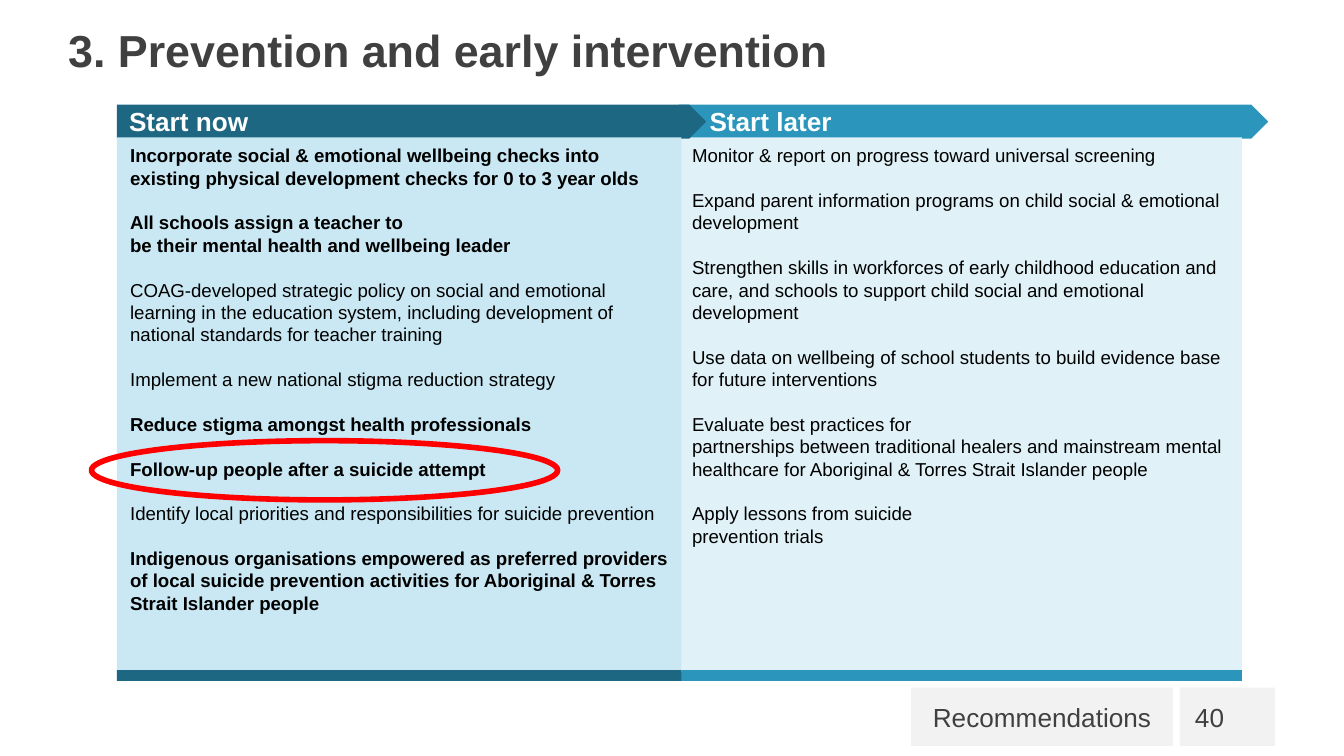
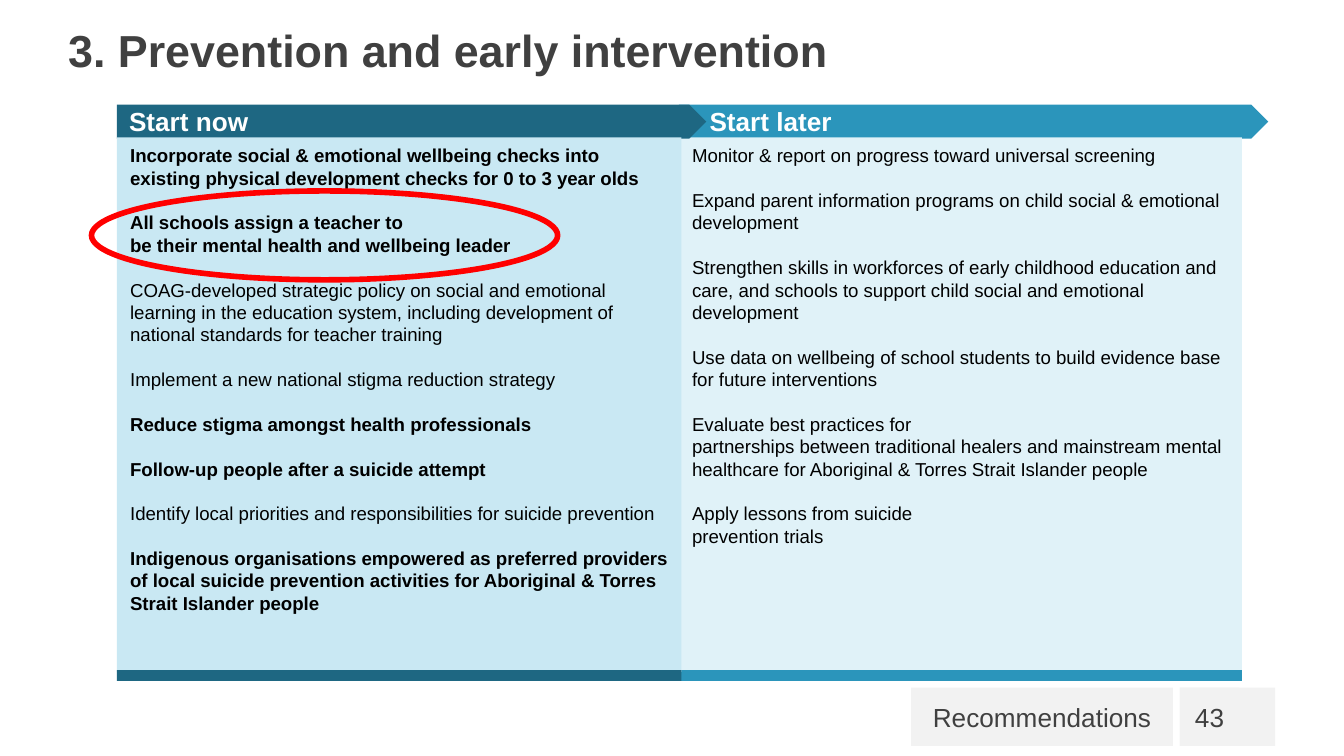
from dataclasses import dataclass
from typing import Any, NamedTuple

import pptx
import pptx.dml.color
import pptx.enum.shapes
import pptx.enum.text
import pptx.shapes.autoshape
import pptx.slide
import pptx.util

Cm = pptx.util.Cm
Pt = pptx.util.Pt
Color = pptx.dml.color.RGBColor
Preset = pptx.enum.shapes.MSO_SHAPE
Align = pptx.enum.text.PP_ALIGN
Anchor = pptx.enum.text.MSO_ANCHOR
Shape = pptx.shapes.autoshape.Shape


@dataclass(frozen=True)
class Theme:
    font: str = "Arial"
    title_size: int = 24
    label_size: int = 14
    body_size: int = 10
    body_pitch: int = 12
    gray_text: Color = Color.from_string("404040")
    body_text: Color = Color.from_string("000000")
    white: Color = Color.from_string("FFFFFF")
    tile: Color = Color.from_string("F2F2F2")
    now: Color = Color.from_string("1E6782")
    now_panel: Color = Color.from_string("C9E8F3")
    later: Color = Color.from_string("2B95BB")
    later_panel: Color = Color.from_string("E0F2F8")
    marker: Color = Color.from_string("FF0000")
    marker_width: int = 3


THEME = Theme()


class Area(NamedTuple):
    left: float
    top: float
    width: float
    height: float


class Line(NamedTuple):
    text: str
    bold: bool = False


class Column(NamedTuple):
    heading: str
    left: float
    heading_left: float
    width: float
    accent: Color
    panel: Color
    actions: tuple[Line, ...]


class Page(NamedTuple):
    number: str
    marker: Area


NOW = Column("Start now", 2.21, 2.06, 10.67, THEME.now, THEME.now_panel, (
    Line("Incorporate social & emotional wellbeing checks into existing "
         "physical development checks for 0 to 3 year olds", True),
    Line("All schools assign a teacher to \n"
         "be their mental health and wellbeing leader", True),
    Line("COAG-developed strategic policy on social and emotional learning in "
         "the education system, including development of national standards "
         "for teacher training"),
    Line("Implement a new national stigma reduction strategy"),
    Line("Reduce stigma amongst health professionals", True),
    Line("Follow-up people after a suicide attempt", True),
    Line("Identify local priorities and responsibilities for suicide prevention"),
    Line("Indigenous organisations empowered as preferred providers of local "
         "suicide prevention activities for Aboriginal & Torres Strait "
         "Islander people", True),
))

LATER = Column("Start later", 12.83, 13.03, 10.64, THEME.later, THEME.later_panel, (
    Line("Monitor & report on progress toward universal screening"),
    Line("Expand parent information programs on child social & emotional "
         "development"),
    Line("Strengthen skills in workforces of early childhood education and "
         "care, and schools to support child social and emotional development"),
    Line("Use data on wellbeing of school students to build evidence base for "
         "future interventions"),
    Line("Evaluate best practices for \n"
         "partnerships between traditional healers and mainstream mental "
         "healthcare for Aboriginal & Torres Strait Islander people"),
    Line("Apply lessons from suicide \nprevention trials"),
))

PAGES = (
    Page("40", Area(1.73, 8.33, 8.81, 1.12)),
    Page("43", Area(1.73, 3.61, 8.81, 1.68)),
)


def apply_format(target: Any, values: dict[str, Any]) -> None:
    for name, value in values.items():
        setattr(target, name, value)


def add_block(page: pptx.slide.Slide, preset: Preset, area: Area,
              fill: Color | None) -> Shape:
    block = page.shapes.add_shape(preset, *map(Cm, area))
    block.shadow.inherit = False
    block.line.fill.background()
    if fill is None:
        block.fill.background()
    else:
        block.fill.solid()
        block.fill.fore_color.rgb = fill
    return block


def write(box: Shape, lines: tuple[Line, ...], size: int, color: Color,
          frame_format: dict[str, Any], para_format: dict[str, Any],
          gap: int = 0) -> None:
    frame = box.text_frame
    apply_format(frame, {"word_wrap": False, "vertical_anchor": Anchor.MIDDLE}
                 | frame_format)
    for index, line in enumerate(lines):
        para = frame.add_paragraph() if index else frame.paragraphs[0]
        para.text = line.text
        apply_format(para, {"alignment": Align.LEFT} | para_format)
        if index:
            para.space_before = Pt(gap)
        for span in para.runs:
            apply_format(span.font, {"name": THEME.font, "size": Pt(size),
                                     "bold": line.bold})
            span.font.color.rgb = color


def add_label(page: pptx.slide.Slide, area: Area, text: str, size: int,
              color: Color, inset: float) -> None:
    box = page.shapes.add_textbox(*map(Cm, area))
    write(box, (Line(text, True),), size, color, {"margin_left": Cm(inset)}, {})


def add_tile(page: pptx.slide.Slide, area: Area, text: str, align: Align,
             inset: float) -> None:
    tile = add_block(page, Preset.RECTANGLE, area, THEME.tile)
    write(tile, (Line(text),), THEME.label_size, THEME.gray_text,
          {"margin_left": Cm(inset), "margin_right": Cm(inset)},
          {"alignment": align})


def add_column(page: pptx.slide.Slide, column: Column) -> None:
    add_block(page, Preset.PENTAGON, Area(column.left, 1.98, 11.14, 0.64),
              column.accent)
    panel = add_block(page, Preset.RECTANGLE,
                      Area(column.left, 2.6, column.width, 10.1), column.panel)
    write(panel, column.actions, THEME.body_size, THEME.body_text,
          {"word_wrap": True, "vertical_anchor": Anchor.TOP,
           "margin_right": Cm(0.2)},
          {"line_spacing": Pt(THEME.body_pitch)}, THEME.body_pitch)
    add_block(page, Preset.RECTANGLE,
              Area(column.left, 12.67, column.width, 0.2), column.accent)
    add_label(page, Area(column.heading_left, 1.86, 3.4, 0.86), column.heading,
              THEME.label_size, THEME.white, 0.38)


def add_marker(page: pptx.slide.Slide, area: Area) -> None:
    ring = add_block(page, Preset.OVAL, area, None)
    ring.line.color.rgb = THEME.marker
    ring.line.width = Pt(THEME.marker_width)


def add_page(deck: Any, content: Page) -> None:
    page = deck.slides.add_slide(deck.slide_layouts[6])
    add_block(page, Preset.RECTANGLE, Area(22.3, 13, 1.8, 1.1), THEME.tile)
    add_label(page, Area(1.04, 0.3, 15, 1.28),
              "3. Prevention and early intervention",
              THEME.title_size, THEME.gray_text, 0.25)
    add_tile(page, Area(17.22, 13, 4.95, 1.1), "Recommendations",
             Align.RIGHT, 0.41)
    add_tile(page, Area(22.3, 13, 1.12, 1.1), content.number,
             Align.CENTER, 0.25)
    for column in (LATER, NOW):
        add_column(page, column)
    add_marker(page, content.marker)


def main() -> None:
    deck = pptx.Presentation()
    apply_format(deck, {"slide_width": Cm(25.4), "slide_height": Cm(14.29)})
    for content in PAGES:
        add_page(deck, content)
    deck.save("out.pptx")


if __name__ == "__main__":
    main()
